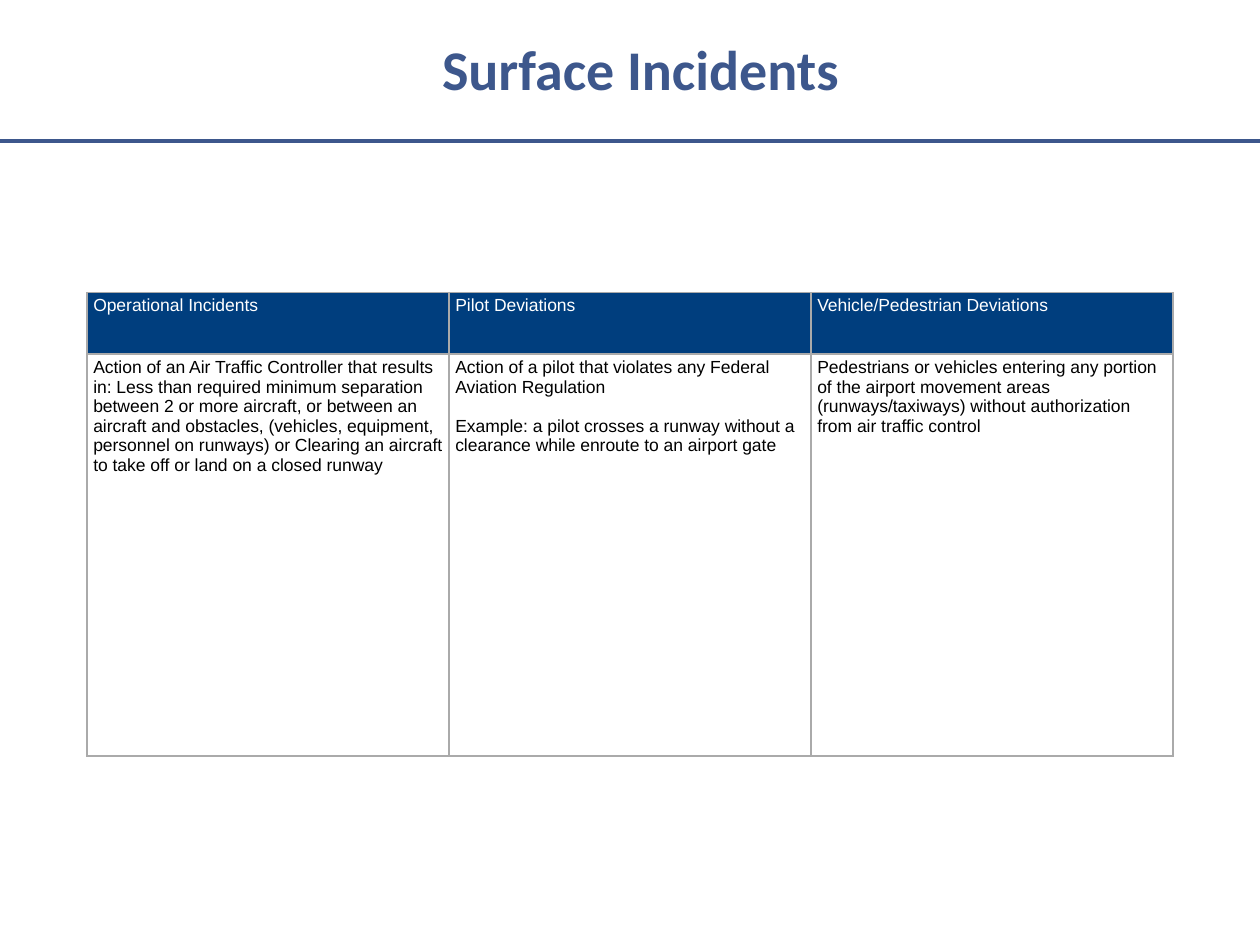
from lxml.etree import SubElement
from pptx import Presentation
from pptx.dml.color import RGBColor
from pptx.enum.shapes import MSO_CONNECTOR
from pptx.enum.text import MSO_ANCHOR, PP_ALIGN
from pptx.oxml.ns import qn
from pptx.util import Inches, Pt

TITLE_BLUE, HEADER_BLUE = "3D578C", "003E7E"
WHITE, BLACK, GRID_GREY = "FFFFFF", "000000", "AAAAAA"

# Each incident type: heading, then the paragraphs below it
INCIDENT_TYPES = [
    ("Operational Incidents", [
        "Action of an Air Traffic Controller that results in: Less than required "
        "minimum separation between 2 or more aircraft, or between an aircraft and "
        "obstacles, (vehicles, equipment, personnel on runways) or Clearing an "
        "aircraft to take off or land on a closed runway"]),
    ("Pilot Deviations", [
        "Action of a pilot that violates any Federal Aviation Regulation",
        "Example: a pilot crosses a runway without a clearance while enroute to an "
        "airport gate"]),
    ("Vehicle/Pedestrian Deviations", [
        "Pedestrians or vehicles entering any portion of the airport movement areas "
        "(runways/taxiways) without authorization from air traffic control"]),
]


def color(hex_string):
    return RGBColor.from_string(hex_string)


def style_font(font, name, size, hex_string, bold=False):
    font.name, font.size, font.bold = name, Pt(size), bold
    font.color.rgb = color(hex_string)


def add_title(page, text, left, top, width, height):
    box = page.shapes.add_textbox(left, top, width, height)
    frame = box.text_frame
    frame.word_wrap = True
    frame.vertical_anchor = MSO_ANCHOR.MIDDLE
    para = frame.paragraphs[0]
    para.text = text
    para.alignment = PP_ALIGN.CENTER
    style_font(para.font, "Calibri", 32, TITLE_BLUE, bold=True)


def add_rule(page, left, top, width):
    rule = page.shapes.add_connector(
        MSO_CONNECTOR.STRAIGHT, left, top, left + width, top)
    rule.line.color.rgb = color(TITLE_BLUE)
    rule.line.width = Pt(2.25)
    SubElement(rule._element.spPr, qn("a:effectLst"))


def add_borders(cell):
    # Borders must come before the fill in the cell properties
    properties = cell._tc.get_or_add_tcPr()
    for position, side in enumerate(("a:lnL", "a:lnR", "a:lnT", "a:lnB")):
        line = SubElement(properties, qn(side), w=str(Pt(0.75)))
        fill = SubElement(line, qn("a:solidFill"))
        SubElement(fill, qn("a:srgbClr"), val=GRID_GREY)
        properties.insert(position, line)


def fill_cell(cell, paragraphs, text_color, fill_color=None):
    cell.margin_left = cell.margin_right = Inches(0.05)
    cell.margin_top = cell.margin_bottom = Inches(0.03)
    if fill_color:
        cell.fill.solid()
        cell.fill.fore_color.rgb = color(fill_color)
    else:
        cell.fill.background()
    add_borders(cell)
    frame = cell.text_frame
    for index, text in enumerate(paragraphs):
        para = frame.add_paragraph() if index else frame.paragraphs[0]
        para.text = text
        if index:
            para.space_before = Pt(11.2)
        style_font(para.font, "Arial", 10, text_color)


def add_incident_table(page, left, top, width, height):
    count = len(INCIDENT_TYPES)
    table = page.shapes.add_table(2, count, left, top, width, height).table
    table.horz_banding = False
    table.rows[0].height = Inches(0.49)
    table.rows[1].height = height - Inches(0.49)
    for index, (heading, paragraphs) in enumerate(INCIDENT_TYPES):
        table.columns[index].width = width // count
        fill_cell(table.cell(0, index), [heading], WHITE, HEADER_BLUE)
        fill_cell(table.cell(1, index), paragraphs, BLACK)


def main():
    deck = Presentation()
    deck.slide_width, deck.slide_height = Inches(10), Inches(7.5)
    page = deck.slides.add_slide(deck.slide_layouts[6])
    # Heading area
    add_rule(page, Inches(0), Inches(1.12), deck.slide_width)
    add_title(page, "Surface Incidents",
              Inches(1.38), Inches(0.28), Inches(7.41), Inches(0.52))
    # Definitions
    add_incident_table(page, Inches(0.69), Inches(2.32), Inches(8.62), Inches(3.68))
    deck.save("out.pptx")


if __name__ == "__main__":
    main()
